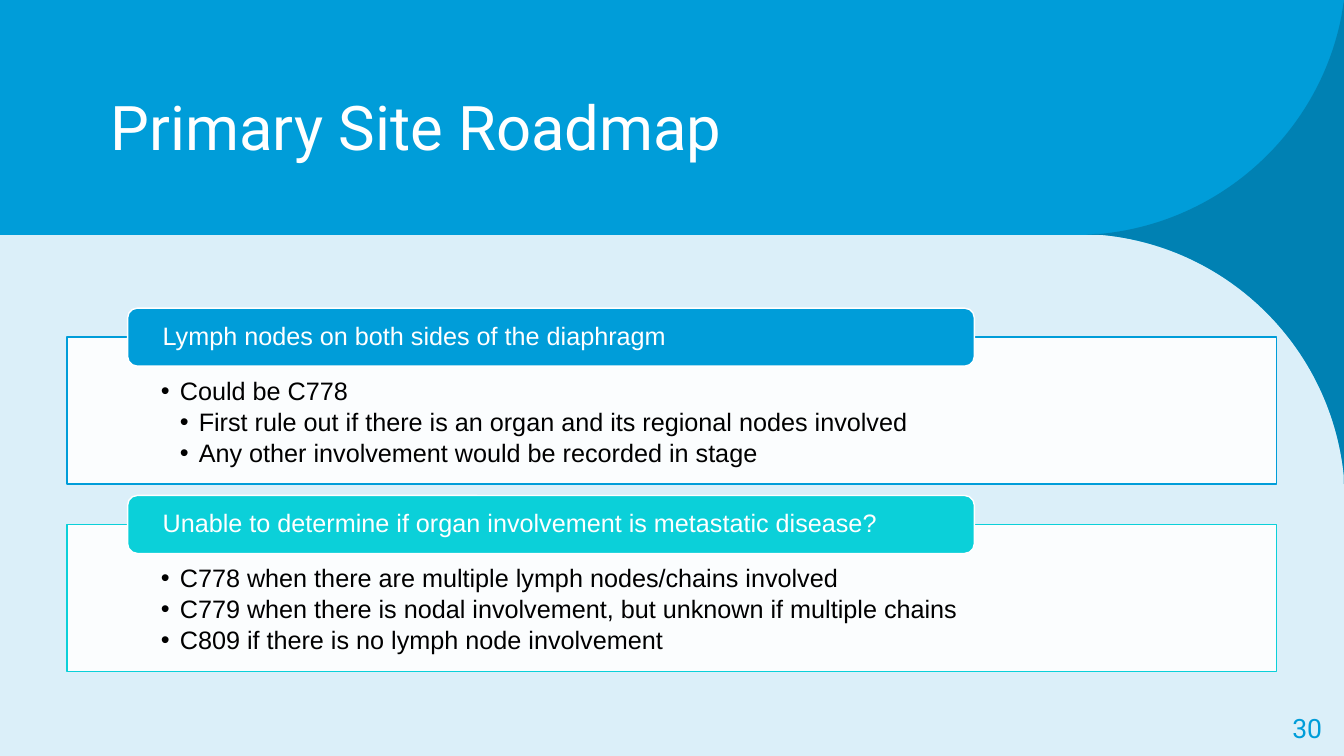
from dataclasses import dataclass

from lxml.etree import SubElement
from pptx import Presentation
from pptx.dml.color import RGBColor
from pptx.enum.shapes import MSO_SHAPE as Preset
from pptx.enum.text import MSO_ANCHOR as Anchor, PP_ALIGN as Align
from pptx.oxml.ns import qn
from pptx.util import Pt


@dataclass(frozen=True)
class Theme:
    pale: str = "DBEFF9"
    blue: str = "009DD9"
    deep: str = "0076A3"
    teal: str = "0BD0D9"
    white: str = "FFFFFF"
    black: str = "000000"
    display: str = "Roboto"
    body: str = "Arial"
    title_size: int = 44
    number_size: int = 19
    body_size: int = 18


THEME = Theme()
WIDTH, HEIGHT = 960, 540
BAND_HEIGHT = 167.8
BULLET_INDENT = 13.5
SECTION_TOP, SECTION_PITCH = 240.8, 133.8

# Each section: accent colour, heading, and (level, text) points
SECTIONS = [
    (THEME.blue, "Lymph nodes on both sides of the diaphragm", [
        (1, "Could be C778"),
        (2, "First rule out if there is an organ and its regional nodes involved"),
        (2, "Any other involvement would be recorded in stage"),
    ]),
    (THEME.teal, "Unable to determine if organ involvement is metastatic disease?", [
        (1, "C778 when there are multiple lymph nodes/chains involved"),
        (1, "C779 when there is nodal involvement, but unknown if multiple chains"),
        (1, "C809 if there is no lymph node involvement"),
    ]),
]

# Each step: one point for a line, three for a Bezier curve
SWOOSH_START = (WIDTH, 0)
SWOOSH_STEPS = [
    [(958.3, 10.8)],
    [(942.5, 94.3), (872.6, 158.4), (787, 167)],
    [(776, 167.4)],
    [(787, BAND_HEIGHT)],
    [(878.4, 176.4), (951.1, 249.1), (WIDTH, 340.6)],
    [(WIDTH, 345.6)],
]


def add_bullet(paragraph, level):
    properties = paragraph._p.get_or_add_pPr()
    properties.set("marL", str(Pt(BULLET_INDENT * level)))
    properties.set("indent", str(-Pt(BULLET_INDENT)))
    SubElement(properties, qn("a:buFont")).set("typeface", THEME.body)
    SubElement(properties, qn("a:buChar")).set("char", "•")


def write(shape, points, font=THEME.body, size=THEME.body_size, color=THEME.white,
          align=Align.LEFT, anchor=Anchor.MIDDLE, insets=(7.2, 3.6, 7.2, 3.6),
          line_spacing=0.9, space_after=0, bullets=False):
    """Fill a shape with (level, text) points; insets run left, top, right, bottom."""
    frame = shape.text_frame
    frame.word_wrap = True
    frame.vertical_anchor = anchor
    (frame.margin_left, frame.margin_top,
     frame.margin_right, frame.margin_bottom) = map(Pt, insets)
    for index, (level, text) in enumerate(points):
        paragraph = frame.add_paragraph() if index else frame.paragraphs[0]
        paragraph.level = level - 1
        paragraph.alignment = align
        paragraph.line_spacing = line_spacing
        paragraph.space_after = Pt(space_after)
        if bullets:
            add_bullet(paragraph, level)
        run = paragraph.add_run()
        run.text = text
        run.font.name = font
        run.font.size = Pt(size)
        run.font.color.rgb = RGBColor.from_string(color)


class SlideBuilder:
    def __init__(self, slide, theme):
        self.slide, self.theme = slide, theme
        slide.background.fill.solid()
        slide.background.fill.fore_color.rgb = RGBColor.from_string(theme.pale)

    def paint(self, shape, fill, line=None, opacity=100):
        shape.shadow.inherit = False
        shape.fill.solid()
        shape.fill.fore_color.rgb = RGBColor.from_string(fill)
        if opacity < 100:
            color = shape.fill._xPr.find(qn("a:solidFill"))[0]
            SubElement(color, qn("a:alpha")).set("val", str(opacity * 1000))
        if line:
            shape.line.color.rgb = RGBColor.from_string(line)
            shape.line.width = Pt(1)
        else:
            shape.line.fill.background()
        return shape

    def box(self, bounds, fill, preset=Preset.RECTANGLE, **style):
        shape = self.slide.shapes.add_shape(preset, *map(Pt, bounds))
        return self.paint(shape, fill, **style)

    def outline(self, start, steps, fill, **style):
        """Draw a closed outline, joining each three-point step into one curve."""
        builder = self.slide.shapes.build_freeform(Pt(start[0]), Pt(start[1]))
        builder.add_line_segments([(Pt(x), Pt(y)) for step in steps for x, y in step])
        shape = builder.convert_to_shape()
        segments = iter(list(shape._element.iter(qn("a:lnTo"))))
        for step in steps:
            first, *others = [next(segments) for _ in step]
            if others:
                first.tag = qn("a:cubicBezTo")
                for other in others:
                    first.append(other[0])
                    other.getparent().remove(other)
        return self.paint(shape, fill, **style)

    def text(self, bounds, text, **style):
        write(self.slide.shapes.add_textbox(*map(Pt, bounds)), [(1, text)], **style)

    def section(self, top, accent, heading, points):
        panel = self.box((48, top, 864, 105), self.theme.white, line=accent, opacity=90)
        write(panel, points, color=self.theme.black, anchor=Anchor.TOP,
              insets=(67, 29.5, 67, 10), space_after=2.7, bullets=True)
        tab = self.box((91.2, top - 20.7, 604.8, 41.4), accent,
                       Preset.ROUNDED_RECTANGLE, line=self.theme.white)
        write(tab, [(1, heading)], insets=(23, 0, 23, 0))


def main():
    deck = Presentation()
    deck.slide_width, deck.slide_height = Pt(WIDTH), Pt(HEIGHT)
    page = SlideBuilder(deck.slides.add_slide(deck.slide_layouts[6]), THEME)

    page.box((0, 0, WIDTH, HEIGHT), THEME.pale)
    page.box((0, 0, WIDTH, BAND_HEIGHT), THEME.blue)
    page.text((72, 46.3, 780, 87), "Primary Site Roadmap", font=THEME.display,
              size=THEME.title_size, line_spacing=1)
    for color, opacity in ((THEME.blue, 100), (THEME.deep, 70)):
        page.outline(SWOOSH_START, SWOOSH_STEPS, color, opacity=opacity)

    page.text((896.5, 507, 55, 28.8), "30", font=THEME.display, size=THEME.number_size,
              color=THEME.blue, align=Align.RIGHT)
    for index, section in enumerate(SECTIONS):
        page.section(SECTION_TOP + index * SECTION_PITCH, *section)

    deck.save("out.pptx")


if __name__ == "__main__":
    main()
